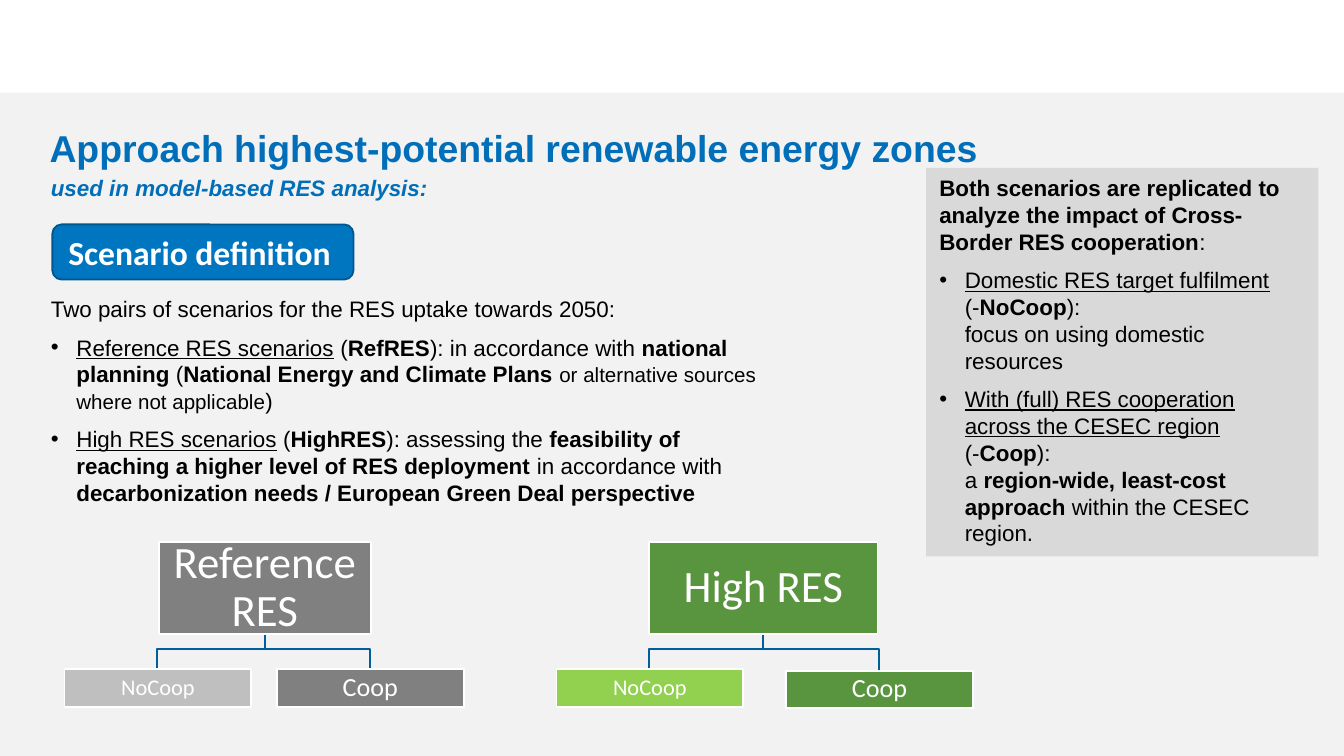
from pptx import Presentation
from pptx.dml.color import RGBColor
from pptx.enum.shapes import MSO_SHAPE
from pptx.enum.text import MSO_ANCHOR, PP_ALIGN
from pptx.util import Emu, Pt
from lxml import etree

RECT, ROUND = MSO_SHAPE.RECTANGLE, MSO_SHAPE.ROUNDED_RECTANGLE
TOP, MIDDLE = MSO_ANCHOR.TOP, MSO_ANCHOR.MIDDLE
LEFT, CENTER = PP_ALIGN.LEFT, PP_ALIGN.CENTER
SCALE = 9144  # 100 px to the inch
BLUE, WHITE, GRAY, GREEN = "006EB8", "FFFFFF", "808080", "59953E"
NS = "http://schemas.openxmlformats.org/drawingml/2006/main"

# Runs are (text, style): b bold, i italic, u underline, s small
INTRO = [("Two pairs of scenarios for the RES uptake towards 2050:", "")]
REF = [("Reference RES scenarios", "u"), (" (", ""), ("RefRES", "b"),
       ("): in accordance with ", ""), ("national planning ", "b"), ("(", ""),
       ("National Energy and Climate Plans ", "b"),
       ("or alternative sources where not applicable", "s"), (")", "")]
HIGH = [("High RES scenarios", "u"), (" (", ""), ("HighRES", "b"),
        ("): assessing the ", ""),
        ("feasibility of reaching a higher level of RES deployment ", "b"),
        ("in accordance with", ""),
        (" decarbonization needs / European Green Deal perspective", "b")]
BOTH = [("Both scenarios are replicated to analyze the impact of "
         "Cross-Border RES cooperation", "b"), (":", "")]
HOME = [("Domestic RES target fulfilment", "u"), (" \n(-", ""), ("NoCoop", "b"),
        ("): \nfocus on using domestic resources", "")]
FULL = [("With (full) RES cooperation across the CESEC region", "u"),
        (" \n(-", ""), ("Coop", "b"), ("): \na ", ""),
        ("region-wide, least-cost approach ", "b"),
        ("within the CESEC region.", "")]


def px(*nums):
    return [Emu(n * SCALE) for n in nums]


def rgb(code):
    return RGBColor.from_string(code)


def add_box(slide, kind, place, fill, line=None):
    box = slide.shapes.add_shape(kind, *px(*place))
    box.shadow.inherit = False
    box.fill.solid()
    box.fill.fore_color.rgb = rgb(fill)
    if line:
        box.line.color.rgb = rgb(line)
        box.line.width = Pt(1)
    else:
        box.line.fill.background()
    return box


def add_bullet(para):
    props = para._p.get_or_add_pPr()
    props.set("marL", str(19 * SCALE))
    props.set("indent", str(-19 * SCALE))
    etree.SubElement(props, f"{{{NS}}}buFont", typeface="Arial")
    etree.SubElement(props, f"{{{NS}}}buChar", char="•")


def add_runs(para, runs, size, color, face):
    for text, style in runs:
        for n, part in enumerate(text.split("\n")):
            if n:
                para.add_line_break()
            run = para.add_run()
            run.text = part
            font = run.font
            font.name = face
            font.size = Pt(size - 1 if "s" in style else size)
            font.color.rgb = rgb(color)
            font.bold, font.italic = "b" in style, "i" in style
            font.underline = "u" in style


def write(shape, paras, size=12, color="000000", face="Arial",
          anchor=TOP, align=LEFT, inset=None, space=None):
    """Fill a shape with text; paragraphs after the first are bullets."""
    frame = shape.text_frame
    frame.word_wrap = True
    frame.vertical_anchor = anchor
    if inset is not None:
        frame.margin_left = frame.margin_right = Emu(inset * SCALE)
        frame.margin_top = frame.margin_bottom = Emu(inset * SCALE)
    for n, runs in enumerate(paras):
        para = frame.add_paragraph() if n else frame.paragraphs[0]
        para.alignment = align
        if space:
            para.line_spacing = space
        if n:
            para.space_before = Pt(6)
            add_bullet(para)
        add_runs(para, runs, size, color, face)


def add_text(slide, place, paras, **look):
    write(slide.shapes.add_textbox(*px(*place)), paras, **look)


def add_elbow(slide, start, end):
    (x, y), (x2, y2) = start, end
    bend = y + 11
    path = slide.shapes.build_freeform(x, y, scale=SCALE)
    path.add_line_segments([(x, bend), (x2, bend), (x2, y2)], close=False)
    elbow = path.convert_to_shape()
    elbow.shadow.inherit = False
    elbow.fill.background()
    elbow.line.color.rgb = rgb("005E9A")
    elbow.line.width = Pt(1)


def add_node(slide, place, fill, text, size, inset):
    node = add_box(slide, RECT, place, fill, WHITE)
    write(node, [[(text, "")]], size, WHITE, "Calibri",
          MIDDLE, CENTER, inset, 0.9)


def add_tree(slide, left, width, name, fill, kids):
    top, high, wide, low = 403, 69, 139, 28
    start = (left + width // 2, top + high)
    for x, y, *_ in kids:
        add_elbow(slide, start, (x + wide // 2, y))
    add_node(slide, (left, top, width, high), fill, name, 24, 2)
    for x, y, tint, text, size in kids:
        add_node(slide, (x, y, wide, low), tint, text, size, 1)


def main():
    deck = Presentation()
    deck.slide_width = Emu(1000 * SCALE)
    deck.slide_height = Emu(deck.slide_width * 9 // 16)
    slide = deck.slides.add_slide(deck.slide_layouts[6])

    # Grey page area
    add_box(slide, RECT, (0, 69, 1000, 494), "F2F2F2")

    # Scenario text and side panel
    add_text(slide, (28, 215, 555, 175), [INTRO, REF, HIGH])
    panel = add_box(slide, RECT, (689, 125, 292, 289), "D9D9D9")
    write(panel, [BOTH, HOME, FULL])

    # Headings
    add_text(slide, (28, 125, 472, 67),
             [[("used in model-based RES analysis:", "bi")]], color=BLUE)
    badge = add_box(slide, ROUND, (39, 167, 224, 41), "0076C0", "00578E")
    write(badge, [[("Scenario definition", "b")]], 18, WHITE, "Calibri", MIDDLE)

    # Scenario trees
    add_tree(slide, 118, 158, "Reference RES", GRAY,
             [(48, 498, "BFBFBF", "NoCoop", 12), (206, 498, GRAY, "Coop", 14)])
    add_tree(slide, 483, 170, "High RES", GREEN,
             [(414, 498, "92D050", "NoCoop", 12), (585, 499, GREEN, "Coop", 14)])

    # Title
    add_text(slide, (27, 84, 862, 55),
             [[("Approach highest-potential renewable energy zones", "b")]],
             size=20, color=BLUE, anchor=MIDDLE, space=0.9)
    deck.save("out.pptx")


if __name__ == "__main__":
    main()
